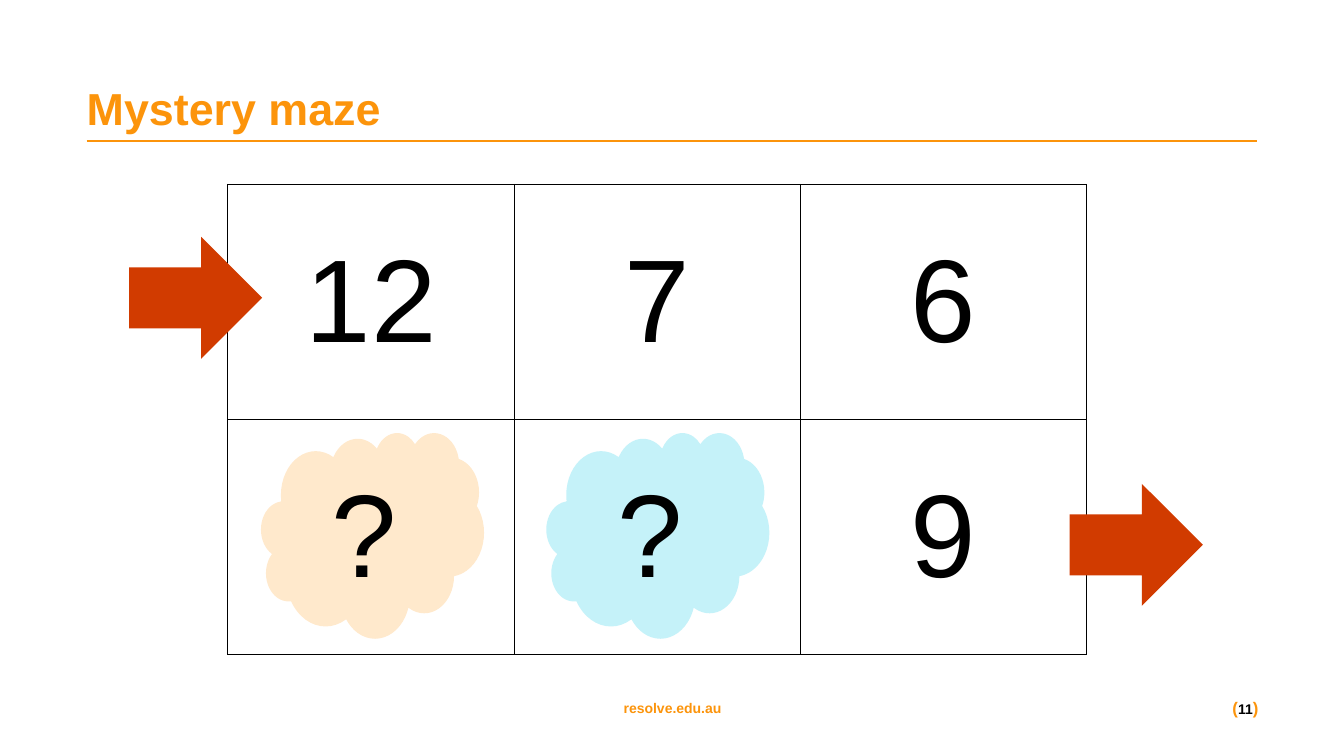
from lxml.etree import SubElement
from pptx import Presentation
from pptx.dml.color import RGBColor
from pptx.enum.shapes import MSO_CONNECTOR, MSO_SHAPE
from pptx.enum.text import MSO_ANCHOR as Anchor, PP_ALIGN as Align
from pptx.oxml import parse_xml
from pptx.oxml.ns import nsdecls, qn
from pptx.util import Inches, Pt

ORANGE = RGBColor(0xFC, 0x94, 0x0B)
RED = RGBColor(0xD1, 0x3B, 0x00)
PEACH = RGBColor(0xFF, 0xE9, 0xCC)
AQUA = RGBColor(0xC5, 0xF2, 0xF9)
BLACK = RGBColor(0, 0, 0)

MAZE = [["12", "7", "6"], ["", "", "9"]]
MAZE_LEFT, MAZE_TOP = 2.26, 1.83
CELL_WIDTH, CELL_HEIGHT = 2.84, 2.33


class SlideBuilder:
    font_name = "Arial"
    number_size = 84

    def __init__(self, presentation):
        self.slide = presentation.slides.add_slide(presentation.slide_layouts[5])
        self.shapes = self.slide.shapes

    def style_font(self, font, size, color, bold=False):
        font.name = self.font_name
        font.size = Pt(size)
        font.bold = bold
        font.color.rgb = color

    def prepare_frame(self, frame):
        frame.word_wrap = True
        frame.vertical_anchor = Anchor.MIDDLE
        frame.margin_left = frame.margin_right = 0
        frame.margin_top = frame.margin_bottom = 0
        return frame.paragraphs[0]

    def title(self, text, left, top, width, height):
        title = self.shapes.title
        title.left, title.top = Inches(left), Inches(top)
        title.width, title.height = Inches(width), Inches(height)
        title.text_frame.text = text
        paragraph = self.prepare_frame(title.text_frame)
        paragraph.alignment = Align.LEFT
        self.style_font(paragraph.font, 32, ORANGE, True)

    def rule(self, left, right, y):
        line = self.shapes.add_connector(
            MSO_CONNECTOR.STRAIGHT, Inches(left), Inches(y), Inches(right), Inches(y))
        line.line.color.rgb = ORANGE
        line.line.width = Pt(1.5)
        SubElement(line._element.spPr, qn("a:effectLst"))

    def footer(self, runs, left, width, alignment):
        box = self.shapes.add_textbox(
            Inches(left), Inches(6.85), Inches(width), Inches(0.34))
        paragraph = self.prepare_frame(box.text_frame)
        paragraph.alignment = alignment
        for text, size, color in runs:
            run = paragraph.add_run()
            run.text = text
            self.style_font(run.font, size, color, True)

    def number(self, paragraph, text):
        paragraph.text = text
        paragraph.alignment = Align.CENTER
        self.style_font(paragraph.font, self.number_size, BLACK)

    def border_cell(self, cell):
        properties = cell._tc.get_or_add_tcPr()
        for index, side in enumerate(("lnL", "lnR", "lnT", "lnB")):
            properties.insert(index, parse_xml(
                f'<a:{side} {nsdecls("a")} w="12700"><a:solidFill>'
                f'<a:srgbClr val="{BLACK}"/></a:solidFill></a:{side}>'))

    def maze(self, rows):
        table = self.shapes.add_table(
            len(rows), len(rows[0]), Inches(MAZE_LEFT), Inches(MAZE_TOP),
            Inches(CELL_WIDTH * len(rows[0])), Inches(CELL_HEIGHT * len(rows))).table
        table.first_row = table.horz_banding = False
        for row_index, row in enumerate(rows):
            table.rows[row_index].height = Inches(CELL_HEIGHT)
            for column_index, text in enumerate(row):
                cell = table.cell(row_index, column_index)
                cell.fill.background()
                self.border_cell(cell)
                cell.vertical_anchor = Anchor.MIDDLE
                cell.margin_left = cell.margin_right = Inches(0.21)
                cell.margin_top = cell.margin_bottom = Inches(0.1)
                if text:
                    self.number(cell.text_frame.paragraphs[0], text)

    def filled_shape(self, kind, left, top, width, height, color, text=""):
        shape = self.shapes.add_shape(
            kind, Inches(left), Inches(top), Inches(width), Inches(height))
        shape.shadow.inherit = False
        shape.fill.solid()
        shape.fill.fore_color.rgb = color
        shape.line.fill.background()
        if text:
            self.number(self.prepare_frame(shape.text_frame), text)


def main():
    presentation = Presentation()
    presentation.slide_width = Inches(13.33)
    presentation.slide_height = Inches(7.5)

    builder = SlideBuilder(presentation)
    builder.rule(0.86, 12.47, 1.4)
    builder.title("Mystery maze", 0.86, 0.78, 11.61, 0.58)
    builder.footer([("resolve.edu.au", 10, ORANGE)], 4.36, 4.62, Align.CENTER)
    builder.footer([("(", 12, ORANGE), ("11", 10, BLACK), (")", 12, ORANGE)],
                   11.69, 0.79, Align.RIGHT)
    builder.maze(MAZE)
    for left, top in ((1.28, 2.35), (10.61, 4.8)):
        builder.filled_shape(MSO_SHAPE.RIGHT_ARROW, left, top, 1.32, 1.21, RED)
    for left, color in ((5.42, AQUA), (2.59, PEACH)):
        builder.filled_shape(MSO_SHAPE.CLOUD, left, 4.29, 2.21, 2.04, color, "?")

    presentation.save("out.pptx")


if __name__ == "__main__":
    main()
